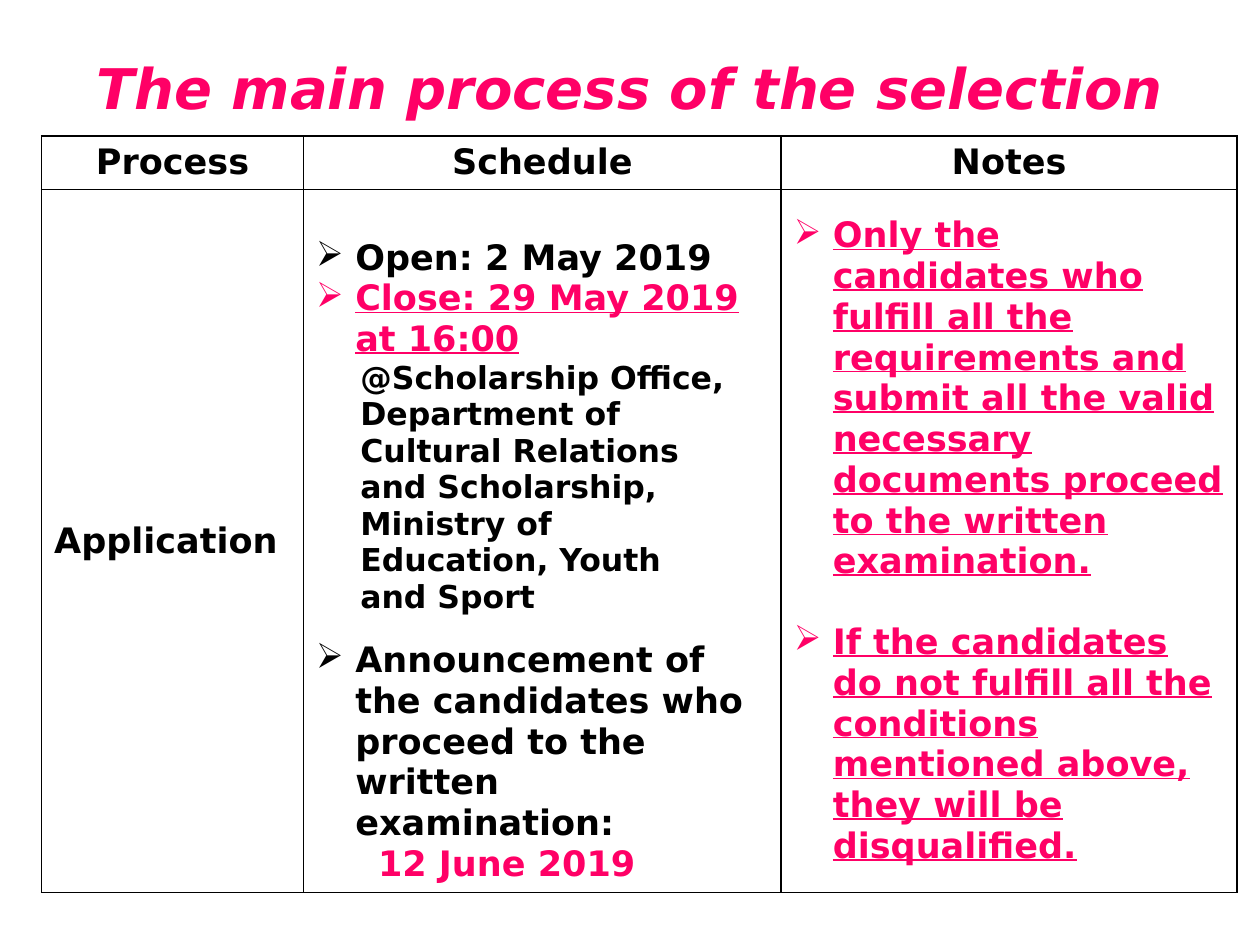
from lxml import etree
from pptx import Presentation, util as u
from pptx.dml.color import RGBColor
from pptx.enum import text
from pptx.oxml import ns

FONT = "DejaVu Sans"
PINK = RGBColor(0xFF, 0x00, 0x66)
BLACK = RGBColor(0x00, 0x00, 0x00)
BULLET_INDENT = 0.31

# Content
TITLE = "The main process of the selection"
HEADERS = ["Process", "Schedule", "Notes"]
OFFICE_LINES = [
    "@Scholarship Office,", "Department of", "Cultural Relations",
    "and Scholarship,", "Ministry of", "Education, Youth", "and Sport",
]
ALERT = dict(bullet=True, color=PINK, underline=True)
SCHEDULE = [
    ("Open: 2 May 2019", dict(bullet=True)),
    ("Close: 29 May 2019 at 16:00", ALERT),
    *[(line, dict(size=18, indent=0.35)) for line in OFFICE_LINES],
    ("Announcement of the candidates who proceed to the written examination:",
     dict(bullet=True, before=14)),
    ("12 June 2019", dict(color=PINK, indent=0.49)),
]
NOTES = [
    ("Only the candidates who fulfill all the requirements and submit all "
     "the valid necessary documents proceed to the written examination.", ALERT),
    ("If the candidates do not fulfill all the conditions mentioned above, "
     "they will be disqualified.", dict(ALERT, before=23)),
]
ROWS = [
    [[(header, dict(align=text.PP_ALIGN.CENTER))] for header in HEADERS],
    [[("Application", {})], SCHEDULE, NOTES],
]

# Grid, in inches
COLUMN_WIDTHS = [2.08, 3.79, 3.62]
ROW_HEIGHTS = [0.42, 5.58]
TABLE_LEFT, TABLE_TOP = 0.33, 1.08
BLANK_LINE = 0.32


def write_paragraph(paragraph, words, size=20, color=BLACK, underline=False,
                    italic=False, align=text.PP_ALIGN.LEFT, before=0,
                    indent=0, bullet=False):
    paragraph.alignment = align
    paragraph.space_before = u.Pt(before)
    run = paragraph.add_run()
    run.text = words
    font = run.font
    font.name, font.size, font.bold = FONT, u.Pt(size), True
    font.italic, font.underline = italic, underline
    font.color.rgb = color
    properties = paragraph._p.get_or_add_pPr()
    left = BULLET_INDENT if bullet else indent
    properties.set("marL", str(u.Inches(left)))
    properties.set("indent", str(-u.Inches(left) if bullet else 0))
    if bullet:
        etree.SubElement(properties, ns.qn("a:buChar")).set("char", "➢")


def add_borders(cell):
    properties = cell._tc.get_or_add_tcPr()
    for position, side in enumerate(("lnL", "lnR", "lnT", "lnB")):
        line = etree.Element(ns.qn(f"a:{side}"), w=str(u.Pt(1)))
        fill = etree.SubElement(line, ns.qn("a:solidFill"))
        etree.SubElement(fill, ns.qn("a:srgbClr"), val=str(BLACK))
        properties.insert(position, line)


def fill_cell(cell, paragraphs):
    cell.fill.background()
    add_borders(cell)
    cell.vertical_anchor = text.MSO_ANCHOR.MIDDLE
    frame = cell.text_frame
    for index, (words, style) in enumerate(paragraphs):
        paragraph = frame.add_paragraph() if index else frame.paragraphs[0]
        write_paragraph(paragraph, words, **style)


def main():
    presentation = Presentation()
    presentation.slide_width, presentation.slide_height = u.Inches(10), u.Inches(7.5)
    slide = presentation.slides.add_slide(presentation.slide_layouts[5])

    # Title
    title = slide.shapes.title
    title.left, title.top = u.Inches(0.5), u.Inches(0.3)
    title.width, title.height = u.Inches(9), u.Inches(0.78)
    title.text_frame.vertical_anchor = text.MSO_ANCHOR.MIDDLE
    write_paragraph(title.text_frame.paragraphs[0], TITLE, size=32, color=PINK,
                    italic=True, align=text.PP_ALIGN.CENTER)

    # Process table
    table = slide.shapes.add_table(
        len(ROWS), len(HEADERS), u.Inches(TABLE_LEFT), u.Inches(TABLE_TOP),
        u.Inches(sum(COLUMN_WIDTHS)), u.Inches(sum(ROW_HEIGHTS))).table
    table.first_row = table.horz_banding = False
    for column, width in zip(table.columns, COLUMN_WIDTHS):
        column.width = u.Inches(width)
    for row, height, contents in zip(table.rows, ROW_HEIGHTS, ROWS):
        row.height = u.Inches(height)
        for cell, paragraphs in zip(row.cells, contents):
            fill_cell(cell, paragraphs)

    # The schedule starts one line lower
    table.cell(1, 1).margin_top = u.Inches(0.05 + BLANK_LINE)

    presentation.save("out.pptx")


if __name__ == "__main__":
    main()
